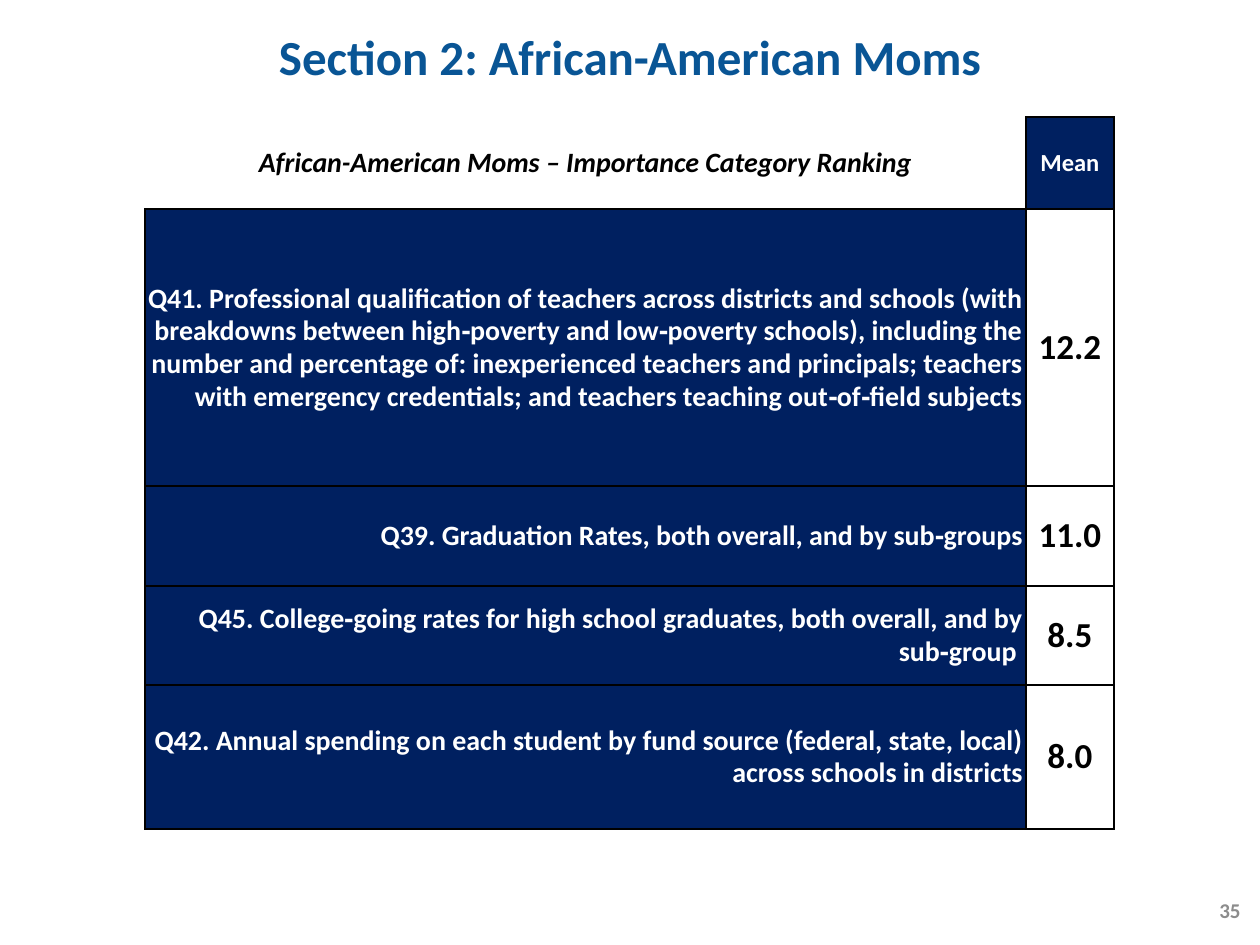
from lxml.etree import SubElement
from pptx import Presentation
from pptx.dml.color import RGBColor
from pptx.enum.text import MSO_ANCHOR, PP_ALIGN
from pptx.oxml.ns import qn
from pptx.util import Pt

EMU_PER_PX = 914400 / 126
NAVY, BLUE, GREY, BLACK, WHITE = "002060", "095595", "8C8C8C", "000000", "FFFFFF"
COLUMN_WIDTHS = [881, 88]
ROW_HEIGHTS = [92, 277, 100, 99, 144]
HEADINGS = ("African-American Moms – Importance Category Ranking", "Mean")
RANKING = [
    ("Q41. Professional qualification of teachers across districts and schools (with "
     "breakdowns between high‐poverty and low‐poverty schools), including the number and "
     "percentage of: inexperienced teachers and principals; teachers with emergency "
     "credentials; and teachers teaching out‐of‐field subjects", "12.2"),
    ("Q39. Graduation Rates, both overall, and by sub‐groups", "11.0"),
    ("Q45. College‐going rates for high school graduates, both overall, and by sub‐group ",
     "8.5"),
    ("Q42. Annual spending on each student by fund source (federal, state, local) "
     "across schools in districts", "8.0"),
]


def px(length):
    return round(length * EMU_PER_PX)


def color(hex_string):
    return RGBColor.from_string(hex_string)


class SlideBuilder:
    def __init__(self, page, font="Calibri"):
        self.page = page
        self.font = font

    def set_text(self, frame, text, size, ink, align, spacing=1.0, italic=False):
        frame.text = text
        para = frame.paragraphs[0]
        para.alignment = align
        para.line_spacing = spacing
        para.font.name = self.font
        para.font.size = Pt(size)
        para.font.bold = True
        para.font.italic = italic
        para.font.color.rgb = color(ink)

    def title(self, text, left, top, width, height):
        box = self.page.shapes.title
        box.left, box.top, box.width, box.height = map(px, (left, top, width, height))
        box.text_frame.vertical_anchor = MSO_ANCHOR.TOP
        self.set_text(box.text_frame, text, 28, BLUE, PP_ALIGN.CENTER, 0.85)

    def page_number(self, text, left, top, width, height):
        box = self.page.shapes.add_textbox(*map(px, (left, top, width, height)))
        box.text_frame.word_wrap = True
        box.text_frame.vertical_anchor = MSO_ANCHOR.MIDDLE
        self.set_text(box.text_frame, text, 12, GREY, PP_ALIGN.RIGHT)

    def table(self, left, top, widths, heights):
        frame = self.page.shapes.add_table(
            len(heights), len(widths), *map(px, (left, top, sum(widths), sum(heights))))
        table = frame.table
        table.first_row = table.horz_banding = False
        for column, width in zip(table.columns, widths):
            column.width = px(width)
        for row, height in zip(table.rows, heights):
            row.height = px(height)
        return table

    def cell(self, cell, text, size, ink, align, fill=None, margin=0, sides="LRTB", **style):
        """Fill one table cell; sides names the edges that carry a line."""
        cell.margin_left = cell.margin_right = px(margin)
        cell.margin_top = cell.margin_bottom = px(margin)
        cell.vertical_anchor = MSO_ANCHOR.MIDDLE
        self.set_text(cell.text_frame, text, size, ink, align, **style)
        self.borders(cell, sides)
        if fill:
            cell.fill.solid()
            cell.fill.fore_color.rgb = color(fill)
        else:
            cell.fill.background()

    def borders(self, cell, sides):
        properties = cell._tc.get_or_add_tcPr()
        for side in "LRTB":
            line = SubElement(properties, qn(f"a:ln{side}"), w=str(Pt(1)))
            if side in sides:
                paint = SubElement(line, qn("a:solidFill"))
                SubElement(paint, qn("a:srgbClr"), val=BLACK)
            else:
                SubElement(line, qn("a:noFill"))


def main():
    deck = Presentation()
    deck.slide_width, deck.slide_height = px(1260), px(945)
    builder = SlideBuilder(deck.slides.add_slide(deck.slide_layouts[5]))

    table = builder.table(145, 117, COLUMN_WIDTHS, ROW_HEIGHTS)
    builder.cell(table.cell(0, 0), HEADINGS[0], 16, BLACK, PP_ALIGN.CENTER,
                 margin=3, sides="RB", italic=True)
    builder.cell(table.cell(0, 1), HEADINGS[1], 14, WHITE, PP_ALIGN.CENTER,
                 fill=NAVY, spacing=0.9)
    for row, (question, mean) in enumerate(RANKING, start=1):
        builder.cell(table.cell(row, 0), question, 16, WHITE, PP_ALIGN.RIGHT,
                     fill=NAVY, margin=3, spacing=0.95)
        builder.cell(table.cell(row, 1), mean, 20, BLACK, PP_ALIGN.CENTER)

    builder.title("Section 2: African-American Moms", 63, 29, 1134, 158)
    builder.page_number("35", 959, 885, 294, 50)
    deck.save("out.pptx")


if __name__ == "__main__":
    main()
